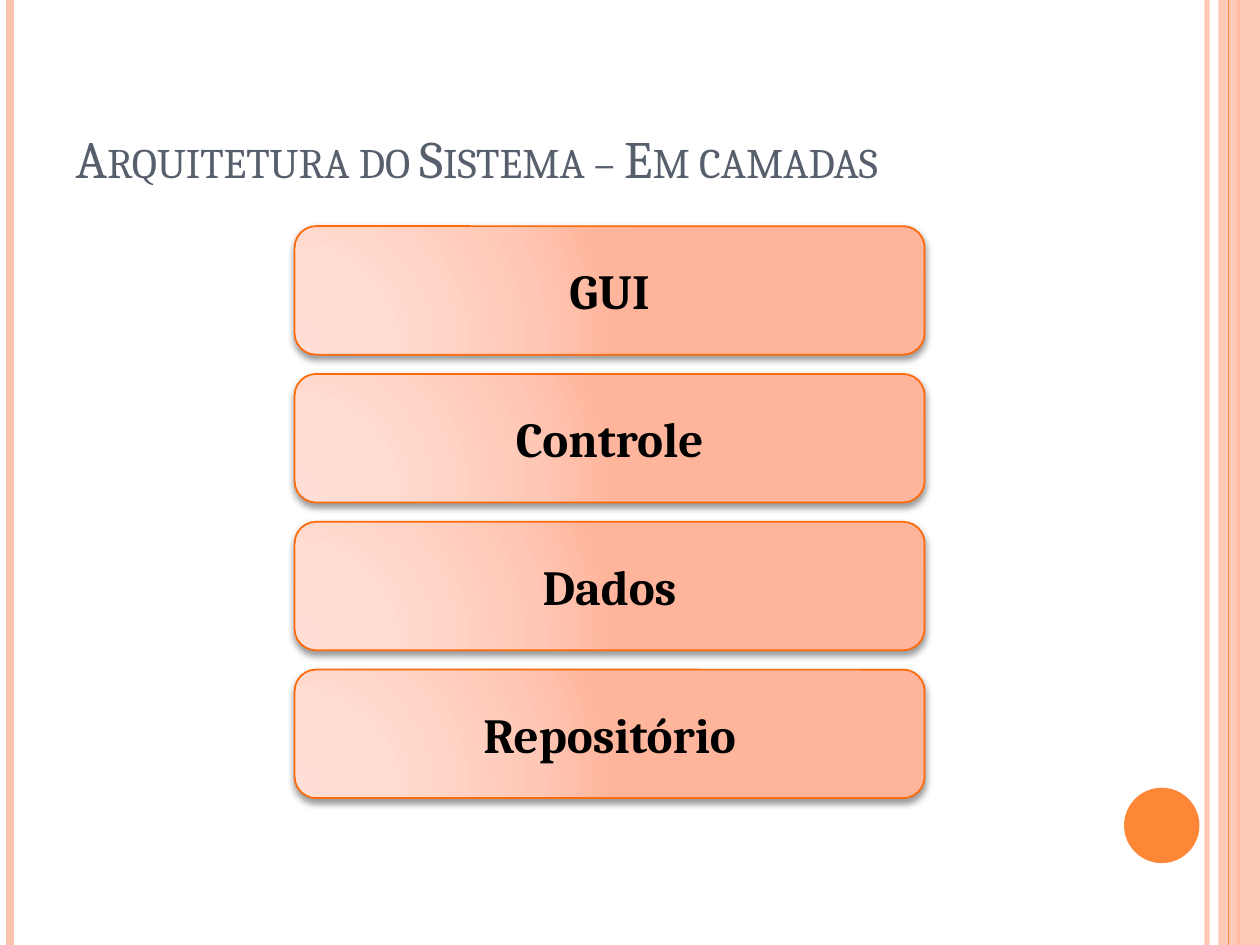
import pptx
import pptx.util
import pptx.oxml
import pptx.oxml.ns
import pptx.dml.color
import pptx.enum.shapes
import pptx.enum.text
from lxml import etree

Cm, Pt = pptx.util.Cm, pptx.util.Pt
SHAPE = pptx.enum.shapes.MSO_SHAPE
ANCHOR = pptx.enum.text.MSO_ANCHOR
ALIGN = pptx.enum.text.PP_ALIGN
qn = pptx.oxml.ns.qn

TITLE = "Arquitetura do Sistema – Em camadas"
LAYERS = ["GUI", "Controle", "Dados", "Repositório"]
FONT = "Cambria"
COLORS = {"peach": "FEC3AE", "orange": "FE8637", "slate": "575F6D",
          "border": "FF6B0A", "black": "000000"}
GRADIENT = [(0, "FFDED5"), (30, "FFDBD0"), (75, "FFC8B6"), (100, "FFB59B")]

SLIDE_W, SLIDE_H = 25.4, 19.05
BACK_RAILS = [(24.33, "peach", 3, 93), (0.2, "peach", 4.5, 100), (24.97, "orange", 1.5, 100)]
FRONT_RAIL = (24.77, "orange", 0.75, 100)
BAND = (24.56, 0, 0.84, SLIDE_H)
DISC = (22.66, 15.88, 1.52, 1.52)
BOX_X, BOX_Y, BOX_W, BOX_H, BOX_STEP = 5.94, 4.56, 12.7, 2.59, 2.98


def rgb(name):
    return pptx.dml.color.RGBColor.from_string(COLORS[name])


def set_alpha(element, percent):
    color = next(element.iter(qn("a:srgbClr")))
    etree.SubElement(color, qn("a:alpha"), val=str(percent * 1000))


def add_rail(s, x, color, width, alpha):
    rail = s.shapes.add_connector(pptx.enum.shapes.MSO_CONNECTOR.STRAIGHT,
                                  Cm(x), 0, Cm(x), Cm(SLIDE_H))
    rail.line.color.rgb = rgb(color)
    rail.line.width = Pt(width)
    spPr = rail._element.spPr
    if alpha < 100:
        set_alpha(spPr, alpha)
    etree.SubElement(spPr, qn("a:effectLst"))


def add_plain(s, kind, box, color):
    sp = s.shapes.add_shape(kind, *map(Cm, box))
    sp.shadow.inherit = False
    sp.fill.solid()
    sp.fill.fore_color.rgb = rgb(color)
    sp.line.fill.background()
    return sp


def add_run(p, text, size, color, bold):
    r = p.add_run()
    r.text = text
    r.font.name, r.font.size, r.font.bold = FONT, Pt(size), bold
    r.font.color.rgb = rgb(color)
    return r


def style_layer(sp):
    sp.line.color.rgb = rgb("border")
    sp.line.width = Pt(1)
    sp.shadow.inherit = False
    spPr = sp._element.spPr
    grad = etree.Element(qn("a:gradFill"), rotWithShape="1")
    stops = etree.SubElement(grad, qn("a:gsLst"))
    for pos, color in GRADIENT:
        gs = etree.SubElement(stops, qn("a:gs"), pos=str(pos * 1000))
        etree.SubElement(gs, qn("a:srgbClr"), val=color)
    circle = etree.SubElement(grad, qn("a:path"), path="circle")
    etree.SubElement(circle, qn("a:fillToRect"), l="5000", t="100000", r="120000", b="10000")
    spPr.find(qn("a:prstGeom")).addnext(grad)
    shadow = etree.SubElement(spPr.find(qn("a:effectLst")), qn("a:outerShdw"),
                              blurRad=str(Pt(4)), dist=str(Pt(2)), dir="5400000",
                              algn="ctr", rotWithShape="0")
    etree.SubElement(shadow, qn("a:srgbClr"), val=COLORS["black"])
    set_alpha(shadow, 40)


def add_layer(s, index, text):
    sp = s.shapes.add_shape(SHAPE.ROUNDED_RECTANGLE, Cm(BOX_X), Cm(BOX_Y + index * BOX_STEP),
                            Cm(BOX_W), Cm(BOX_H))
    style_layer(sp)
    tf = sp.text_frame
    tf.vertical_anchor = ANCHOR.MIDDLE
    p = tf.paragraphs[0]
    p.alignment = ALIGN.CENTER
    add_run(p, text, 28, "black", True)


def add_title(s):
    sp = s.shapes.title
    sp.left, sp.top, sp.width, sp.height = Cm(1.27), Cm(0.76), Cm(20.75), Cm(3.18)
    tf = sp.text_frame
    tf.auto_size = pptx.enum.text.MSO_AUTO_SIZE.NONE
    tf.word_wrap = True
    tf.vertical_anchor = ANCHOR.BOTTOM
    p = tf.paragraphs[0]
    p.alignment = ALIGN.LEFT
    r = add_run(p, TITLE, 30, "slate", False)
    r._r.get_or_add_rPr().set("cap", "small")


def main():
    prs = pptx.Presentation()
    prs.slide_width, prs.slide_height = Cm(SLIDE_W), Cm(SLIDE_H)
    s = prs.slides.add_slide(prs.slide_layouts[5])
    for rail in BACK_RAILS:
        add_rail(s, *rail)
    band = add_plain(s, SHAPE.RECTANGLE, BAND, "peach")
    set_alpha(band._element.spPr, 87)
    add_rail(s, *FRONT_RAIL)
    add_plain(s, SHAPE.OVAL, DISC, "orange")
    add_title(s)
    for index, text in enumerate(LAYERS):
        add_layer(s, index, text)
    prs.save("out.pptx")


if __name__ == "__main__":
    main()
